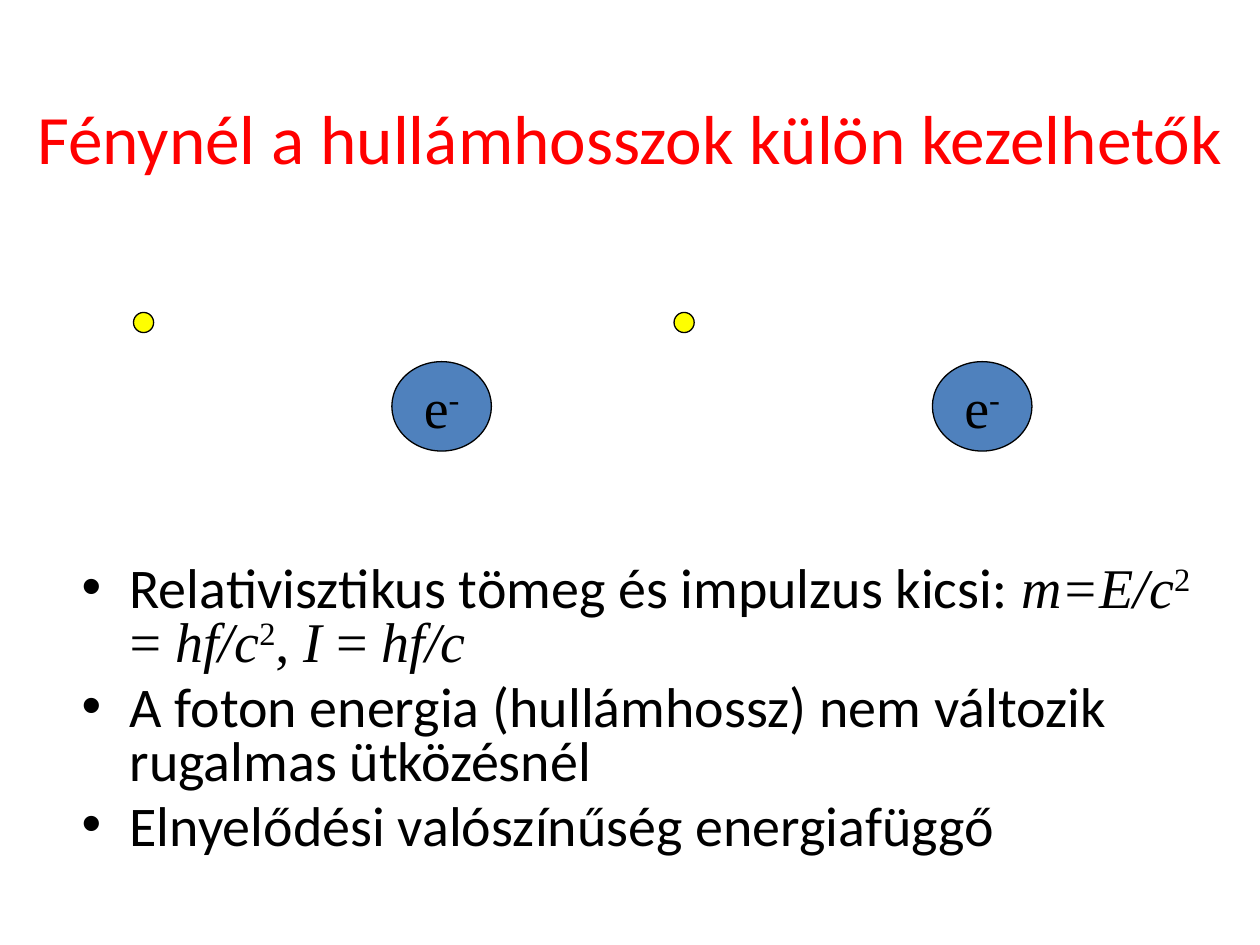
from lxml.etree import SubElement
from pptx import Presentation
from pptx.dml.color import RGBColor
from pptx.enum.shapes import MSO_SHAPE as Shape
from pptx.enum.text import MSO_ANCHOR as Anchor, PP_ALIGN as Align
from pptx.oxml.ns import qn
from pptx.util import Inches, Pt

COLORS = {"title": "FF0000", "text": "000000", "line": "000000",
          "electron": "4F81BD", "photon": "FEFE00"}
SANS, SERIF = "Calibri", "Times New Roman"

# Run styles: font, italic, superscript
STYLES = {"plain": (SANS, False, False), "serif": (SERIF, False, False),
          "var": (SERIF, True, False), "sup": (SERIF, False, True)}

STATEMENTS = [
    [("Relativisztikus tömeg és impulzus kicsi: ", "plain"),
     ("m=E/c", "var"), ("2", "sup"), (" = ", "serif"),
     ("hf/c", "var"), ("2", "sup"), (", ", "serif"),
     ("I ", "var"), ("= ", "serif"), ("hf/c", "var")],
    [("A foton energia (hullámhossz) nem változik rugalmas ütközésnél", "plain")],
    [("Elnyelődési valószínűség energiafüggő", "plain")],
]


def set_attributes(target, values):
    for name, value in values.items():
        setattr(target, name, value)


def rgb(key):
    return RGBColor.from_string(COLORS[key])


def add_run(paragraph, text, style, size=32, color="text"):
    name, italic, superscript = STYLES[style]
    run = paragraph.add_run()
    run.text = text
    set_attributes(run.font, {"name": name, "size": Pt(size), "italic": italic})
    run.font.color.rgb = rgb(color)
    if superscript:
        run.font._element.set("baseline", "30000")


def add_title(slide, left, top, width, height):
    title = slide.shapes.title
    set_attributes(title, {"left": Inches(left), "top": Inches(top),
                           "width": Inches(width), "height": Inches(height)})
    set_attributes(title.text_frame,
                   {"vertical_anchor": Anchor.MIDDLE, "word_wrap": True})
    heading = title.text_frame.paragraphs[0]
    heading.alignment = Align.CENTER
    add_run(heading, "Fénynél a hullámhosszok külön kezelhetők", "plain", 39.6, "title")


def add_particle(slide, left, top, width, height, kind):
    particle = slide.shapes.add_shape(
        Shape.OVAL, Inches(left), Inches(top), Inches(width), Inches(height))
    particle.shadow.inherit = False
    particle.fill.solid()
    particle.fill.fore_color.rgb = rgb(kind)
    particle.line.color.rgb = rgb("line")
    particle.line.width = Pt(0.75)
    return particle


def add_collision(slide, left, top):
    """A photon at the top left, approaching an electron."""
    electron = add_particle(slide, left + 2.05, top + 0.39, 0.79, 0.71, "electron")
    set_attributes(electron.text_frame,
                   {"vertical_anchor": Anchor.MIDDLE, "word_wrap": False})
    symbol = electron.text_frame.paragraphs[0]
    symbol.alignment = Align.CENTER
    add_run(symbol, "e", "serif")
    add_run(symbol, "-", "sup")
    add_particle(slide, left, top, 0.16, 0.16, "photon")


def add_bullet(paragraph, indent):
    properties = paragraph._p.get_or_add_pPr()
    properties.set("marL", str(Inches(indent)))
    properties.set("indent", str(-Inches(indent)))
    SubElement(properties, qn("a:buFont")).set("typeface", "Arial")
    SubElement(properties, qn("a:buChar")).set("char", "•")


def add_statements(slide, left, top, width, height):
    frame = slide.shapes.add_textbox(
        Inches(left), Inches(top), Inches(width), Inches(height)).text_frame
    frame.word_wrap = True
    for index, runs in enumerate(STATEMENTS):
        paragraph = frame.add_paragraph() if index else frame.paragraphs[0]
        set_attributes(paragraph, {"line_spacing": 0.8, "space_before": Pt(6.4)})
        add_bullet(paragraph, 0.38)
        for text, style in runs:
            add_run(paragraph, text, style)


def main():
    deck = Presentation()
    set_attributes(deck, {"slide_width": Inches(10), "slide_height": Inches(7.5)})
    slide = deck.slides.add_slide(deck.slide_layouts.get_by_name("Title Only"))

    # Heading
    add_title(slide, 0, 0.46, 10, 1.25)
    # Bulleted statements
    add_statements(slide, 0.55, 4.44, 9.02, 2.4)
    # Two identical collisions side by side
    for left in (1.06, 5.35):
        add_collision(slide, left, 2.48)

    deck.save("out.pptx")


if __name__ == "__main__":
    main()
